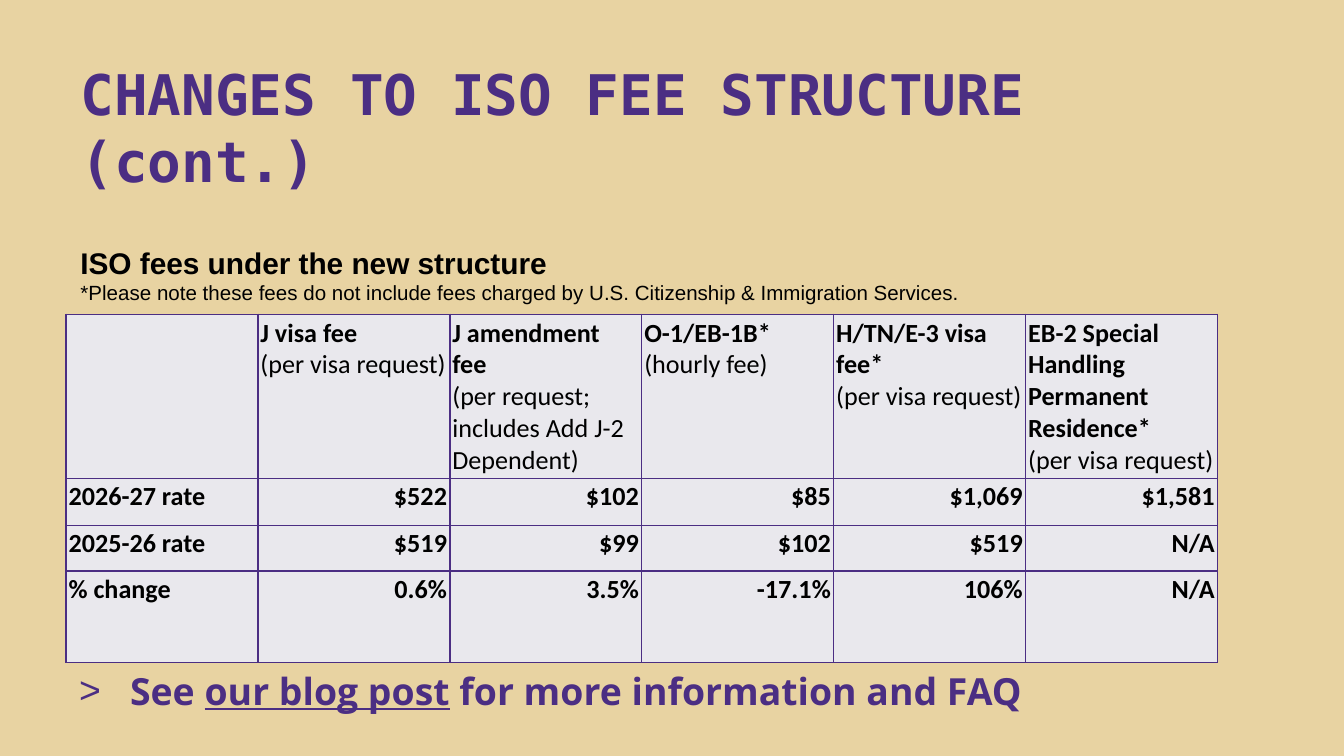
"""Build the slide on changes to the ISO fee structure."""
from copy import deepcopy
from dataclasses import dataclass

from lxml.etree import SubElement
from pptx import Presentation
from pptx.dml.color import RGBColor
from pptx.enum.text import MSO_ANCHOR, PP_ALIGN
from pptx.oxml.ns import qn
from pptx.util import Inches, Pt


@dataclass(frozen=True)
class Theme:
    sand: RGBColor = RGBColor.from_string("E8D3A2")
    purple: RGBColor = RGBColor.from_string("4B2E83")
    black: RGBColor = RGBColor.from_string("000000")
    gray: RGBColor = RGBColor.from_string("E9E8ED")
    title: int = 30
    link: int = 20
    head: int = 16
    cell: int = 14
    note: int = 11


def style(para, face, size, color, bold=True):
    for run in para.runs:
        font = run.font
        font.name, font.size, font.bold = face, Pt(size), bold
        font.color.rgb = color


def add_box(left, top, width, height, anchor=MSO_ANCHOR.TOP):
    box = slide.shapes.add_textbox(Inches(left), Inches(top), Inches(width), Inches(height))
    frame = box.text_frame
    frame.word_wrap = True
    frame.vertical_anchor = anchor
    return frame


theme = Theme()
deck = Presentation()
deck.slide_width = Inches(10)
deck.slide_height = deck.slide_width * 9 // 16
slide = deck.slides.add_slide(deck.slide_layouts[6])
slide.background.fill.solid()
slide.background.fill.fore_color.rgb = theme.sand

title = add_box(0.5, 0.4, 8.95, 1.09, MSO_ANCHOR.BOTTOM)
title.text = "CHANGES TO ISO FEE STRUCTURE (cont.)"
style(title.paragraphs[0], "DejaVu Sans Mono", theme.title, theme.purple)

intro = add_box(0.5, 1.77, 6.82, 0.86)
intro.word_wrap = False
intro.text = (
    "ISO fees under the new structure\n"
    "*Please note these fees do not include fees charged by U.S. Citizenship & Immigration Services."
)
style(intro.paragraphs[0], "Arial", theme.head, theme.black)
style(intro.paragraphs[1], "Arial", theme.note, theme.black, False)

rows = [
    [
        "",
        "J visa fee\v(per visa request)",
        "J amendment fee\v(per request; includes Add J-2 Dependent)",
        "O-1/EB-1B*\v(hourly fee)",
        "H/TN/E-3 visa fee*\v(per visa request)",
        "EB-2 Special Handling Permanent Residence*\v(per visa request)",
    ],
    ["2026-27 rate", "$522", "$102", "$85", "$1,069", "$1,581"],
    ["2025-26 rate", "$519", "$99", "$102", "$519", "N/A"],
    ["% change", "0.6%", "3.5%", "-17.1%", "106%", "N/A"],
]
highs = [1.22, 0.35, 0.34, 0.68]
grid = slide.shapes.add_table(
    len(rows), len(rows[0]), Inches(0.49), Inches(2.34), Inches(8.57), Inches(sum(highs))
).table
grid.first_row = grid.horz_banding = False
for row, high in zip(grid.rows, highs):
    row.height = Inches(high)

for r, row in enumerate(rows):
    for c, text in enumerate(row):
        cell = grid.cell(r, c)
        cell.margin_left = cell.margin_right = Inches(0.02)
        cell.margin_top = cell.margin_bottom = Inches(0.02)
        props = cell._tc.get_or_add_tcPr()
        for side in ("a:lnL", "a:lnR", "a:lnT", "a:lnB"):
            line = SubElement(props, qn(side), w=str(Pt(1)))
            fill = SubElement(line, qn("a:solidFill"))
            SubElement(fill, qn("a:srgbClr"), val=str(theme.purple))
        cell.fill.solid()
        cell.fill.fore_color.rgb = theme.gray
        para = cell.text_frame.paragraphs[0]
        para.text = text
        para.alignment = PP_ALIGN.RIGHT if r and c else PP_ALIGN.LEFT
        style(para, "Calibri", theme.cell, theme.black)
        for gap in para._p.findall(qn("a:br")):
            gap.append(deepcopy(para.runs[0]._r.rPr))
        for run in para.runs[1:]:
            run.font.bold = False

more = add_box(0.49, 4.92, 8.96, 0.47).paragraphs[0]
props = more._p.get_or_add_pPr()
props.set("marL", str(Inches(0.38)))
props.set("indent", str(-Inches(0.38)))
SubElement(props, qn("a:buFont"), typeface="Arial")
SubElement(props, qn("a:buChar"), char=">")
for text in ("See ", "our blog post", " for more information and FAQ"):
    more.add_run().text = text
style(more, "Open Sans", theme.link, theme.purple)
more.runs[1].font.underline = True

deck.save("out.pptx")
